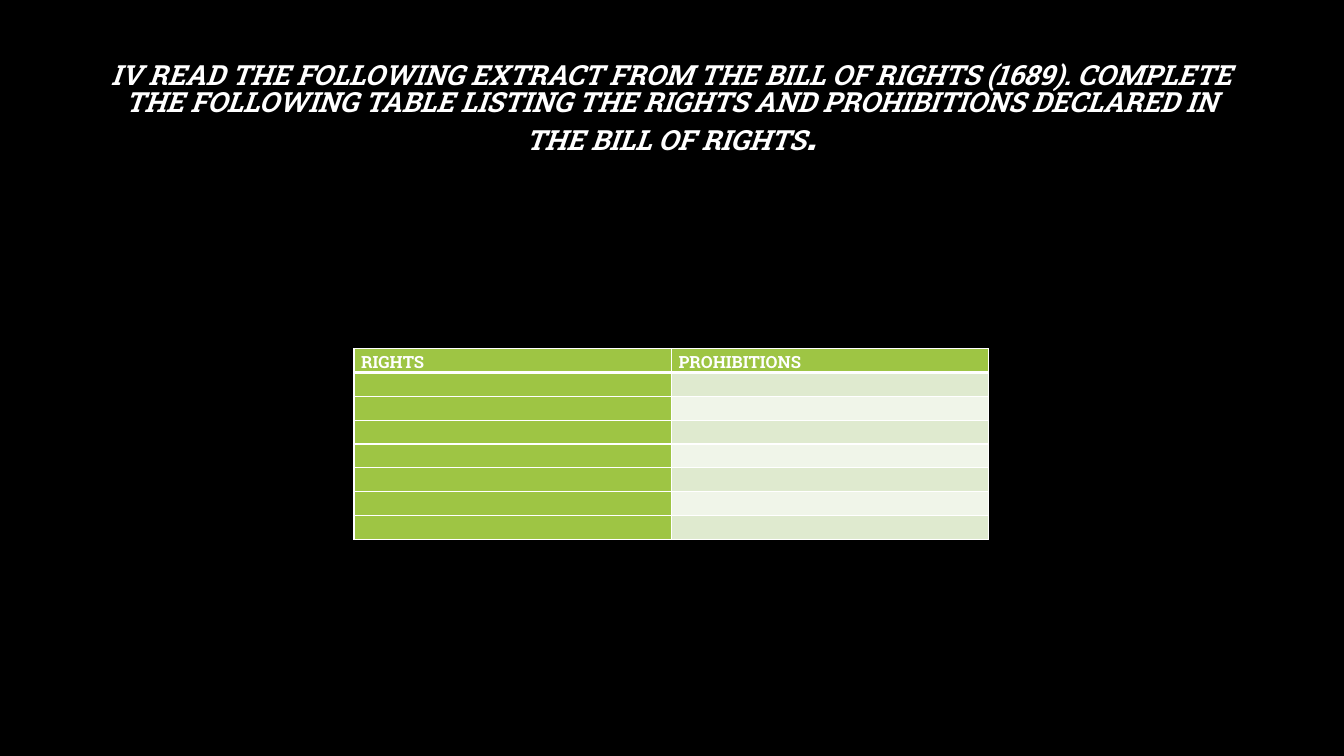
import pptx
import pptx.dml.color
import pptx.enum.text
import pptx.oxml
import pptx.oxml.ns
import pptx.util
from pptx.util import Cm

BLACK = pptx.dml.color.RGBColor(0x00, 0x00, 0x00)
WHITE = pptx.dml.color.RGBColor(0xFF, 0xFF, 0xFF)
GREEN = pptx.dml.color.RGBColor(0x9E, 0xC5, 0x44)
BAND_DARK = pptx.dml.color.RGBColor(0xDF, 0xEA, 0xCF)
BAND_LIGHT = pptx.dml.color.RGBColor(0xF0, 0xF5, 0xE9)

TITLE_RUNS = [
    ("IV READ THE FOLLOWING EXTRACT FROM THE BILL OF RIGHTS (1689). "
     "COMPLETE THE FOLLOWING TABLE LISTING THE RIGHTS AND PROHIBITIONS "
     "DECLARED IN THE BILL OF RIGHTS", 19.8),
    (".", 30.6),
]
HEADINGS = ["RIGHTS", "PROHIBITIONS"]
EMPTY_ROWS = 7


class SlideBuilder:
    font_name = "Roboto Slab"
    cell_size = 12

    def __init__(self, presentation):
        self.slide = presentation.slides.add_slide(presentation.slide_layouts[5])
        background = self.slide.background.fill
        background.solid()
        background.fore_color.rgb = BLACK

    def add_run(self, paragraph, text, size, italic=False):
        run = paragraph.add_run()
        run.text = text
        run.font.name = self.font_name
        run.font.size = pptx.util.Pt(size)
        run.font.bold = True
        run.font.italic = italic
        run.font.color.rgb = WHITE

    def add_title(self, runs, left, top, width, height):
        title = self.slide.shapes.title
        title.left, title.top, title.width, title.height = left, top, width, height
        frame = title.text_frame
        frame.word_wrap = True
        frame.auto_size = pptx.enum.text.MSO_AUTO_SIZE.NONE
        frame.vertical_anchor = pptx.enum.text.MSO_ANCHOR.TOP
        frame.margin_top = frame.margin_bottom = 0
        paragraph = frame.paragraphs[0]
        paragraph.alignment = pptx.enum.text.PP_ALIGN.CENTER
        paragraph.line_spacing = 0.81
        for text, size in runs:
            self.add_run(paragraph, text, size, italic=True)

    def add_border(self, cell, side, points):
        cell._tc.get_or_add_tcPr().append(pptx.oxml.parse_xml(
            f'<a:ln{side} {pptx.oxml.ns.nsdecls("a")} w="{pptx.util.Pt(points)}">'
            f'<a:solidFill><a:srgbClr val="{WHITE}"/></a:solidFill></a:ln{side}>'))

    def format_cell(self, cell, text, fill, top_border, bottom_border):
        for side, points in zip("LRTB", (1, 1, top_border, bottom_border)):
            self.add_border(cell, side, points)
        cell.fill.solid()
        cell.fill.fore_color.rgb = fill
        cell.margin_left = cell.margin_right = Cm(0.18)
        cell.margin_top = cell.margin_bottom = 0
        paragraph = cell.text_frame.paragraphs[0]
        paragraph.alignment = pptx.enum.text.PP_ALIGN.JUSTIFY
        paragraph.line_spacing = 1.07
        if text:
            self.add_run(paragraph, text, self.cell_size)
        else:
            end_properties = paragraph._p.get_or_add_endParaRPr()
            end_properties.set("sz", str(self.cell_size * 100))
            end_properties.append(pptx.oxml.parse_xml(
                f'<a:latin {pptx.oxml.ns.nsdecls("a")} typeface="{self.font_name}"/>'))

    def add_table(self, headings, empty_rows, left, top, column_width, row_height):
        row_count, column_count = empty_rows + 1, len(headings)
        table = self.slide.shapes.add_table(
            row_count, column_count, left, top,
            column_width * column_count, row_height * row_count).table
        for row_index in range(row_count):
            band = BAND_DARK if row_index % 2 else BAND_LIGHT
            for column_index, heading in enumerate(headings):
                is_header = row_index == 0
                self.format_cell(
                    table.cell(row_index, column_index),
                    heading if is_header else "",
                    GREEN if is_header or column_index == 0 else band,
                    3 if row_index == 1 else 1,
                    3 if is_header else 1)


def main():
    presentation = pptx.Presentation()
    presentation.slide_width = Cm(33.87)
    presentation.slide_height = Cm(19.05)
    builder = SlideBuilder(presentation)
    builder.add_title(TITLE_RUNS, Cm(2.54), Cm(1.6), Cm(28.75), Cm(3.68))
    builder.add_table(HEADINGS, EMPTY_ROWS, Cm(8.92), Cm(8.79), Cm(8), Cm(0.6))
    presentation.save("out.pptx")


if __name__ == "__main__":
    main()
